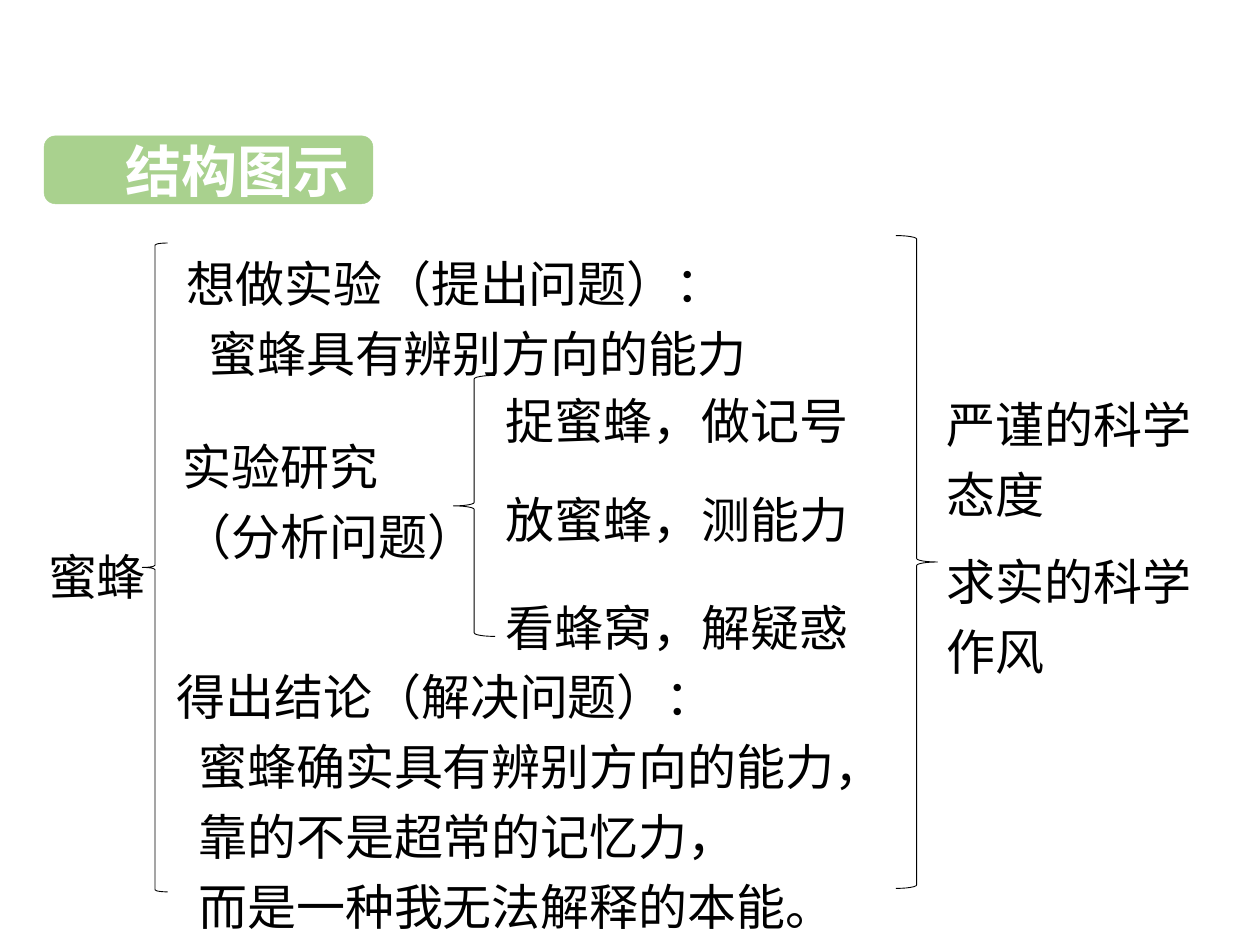
"""Build the structure diagram slide for the lesson on bees."""
import pptx
import pptx.util
from lxml import etree
from pptx.dml.color import RGBColor
from pptx.enum.shapes import MSO_SHAPE
from pptx.enum.text import MSO_ANCHOR, PP_ALIGN
from pptx.oxml.ns import qn
from pptx.util import Cm, Pt

FONT = "Noto Sans CJK SC"
BLACK = RGBColor(0x00, 0x00, 0x00)
WHITE = RGBColor(0xFF, 0xFF, 0xFF)
GREEN = RGBColor(0xA9, 0xD1, 0x8E)

HEADING = "结构图示"
HEADING_BADGE = (0.89, 2.74, 6.63, 1.37)
HEADING_BOX = (2.29, 2.62, 5.23, 1.63)

BRACES = [
    (MSO_SHAPE.LEFT_BRACE, (2.87, 4.9, 0.51, 13.08)),
    (MSO_SHAPE.LEFT_BRACE, (9.14, 7.57, 0.84, 5.26)),
    (MSO_SHAPE.RIGHT_BRACE, (18.06, 4.75, 0.84, 13.16)),
]

STAGES = [
    ((3.58, 4.78, 15.44, 2.77), ["想做实验（提出问题）：", "蜜蜂具有辨别方向的能力"], 0.44),
    ((3.51, 8.48, 7.24, 2.51), ["实验研究", "（分析问题）"], 0),
    ((3.38, 13.11, 15.65, 5.05),
     ["得出结论（解决问题）：", "蜜蜂确实具有辨别方向的能力，",
      "靠的不是超常的记忆力，", "而是一种我无法解释的本能。"], 0.44),
]
STEPS = [(7.54, "捉蜜蜂，做记号"), (9.55, "放蜜蜂，测能力"), (11.73, "看蜂窝，解疑惑")]
STEP_LEFT, STEP_WIDTH, STEP_HEIGHT = 10.01, 7.87, 1.19

SUMMARIES = [
    ((0.79, 10.69, 2.39, 1.22), ["蜜蜂"]),
    ((18.9, 7.62, 5.79, 5.16), ["严谨的科学态度", "求实的科学作风"]),
]


def cm_box(box):
    return [Cm(length) for length in box]


def add_run(paragraph, words, size, color, bold=False):
    run = paragraph.add_run()
    run.text = words
    run.font.size = Pt(size)
    run.font.bold = bold
    run.font.color.rgb = color
    run.font.name = FONT
    etree.SubElement(run.font._element, qn("a:ea")).set("typeface", FONT)


def add_lines(slide, box, lines, align, detail_indent=0, space_before=0):
    frame = slide.shapes.add_textbox(*cm_box(box)).text_frame
    frame.word_wrap = True
    frame.vertical_anchor = MSO_ANCHOR.TOP
    frame.margin_left = frame.margin_right = Cm(0.18)
    frame.margin_top = frame.margin_bottom = Cm(0.1)
    for number, line in enumerate(lines):
        paragraph = frame.add_paragraph() if number else frame.paragraphs[0]
        paragraph.alignment = align
        paragraph.line_spacing = Pt(40)
        paragraph.space_before = Pt(space_before)
        if number and detail_indent:
            properties = paragraph._p.get_or_add_pPr()
            properties.set("marL", str(Cm(detail_indent)))
            properties.set("indent", "0")
        add_run(paragraph, line, 28, BLACK)


def add_outline(slide, preset, box, color, width):
    outline = slide.shapes.add_shape(preset, *cm_box(box))
    outline.shadow.inherit = False
    outline.fill.background()
    outline.line.color.rgb = color
    outline.line.width = Pt(width)
    return outline


def add_heading(slide):
    badge = add_outline(slide, MSO_SHAPE.ROUNDED_RECTANGLE, HEADING_BADGE, GREEN, 0.25)
    badge.fill.solid()
    badge.fill.fore_color.rgb = GREEN
    frame = slide.shapes.add_textbox(*cm_box(HEADING_BOX)).text_frame
    frame.word_wrap = True
    add_run(frame.paragraphs[0], HEADING, 32, WHITE, bold=True)


def main():
    presentation = pptx.Presentation()
    presentation.slide_width, presentation.slide_height = Cm(25.4), Cm(19.05)
    slide = presentation.slides.add_slide(presentation.slide_layouts[6])
    add_heading(slide)
    for preset, box in BRACES:
        add_outline(slide, preset, box, BLACK, 0.5)
    for box, lines, indent in STAGES:
        add_lines(slide, box, lines, PP_ALIGN.JUSTIFY, detail_indent=indent)
    for top, step in STEPS:
        box = (STEP_LEFT, top, STEP_WIDTH, STEP_HEIGHT)
        add_lines(slide, box, [step], PP_ALIGN.JUSTIFY)
    for box, lines in SUMMARIES:
        add_lines(slide, box, lines, PP_ALIGN.LEFT, space_before=10)
    presentation.save("out.pptx")


if __name__ == "__main__":
    main()
